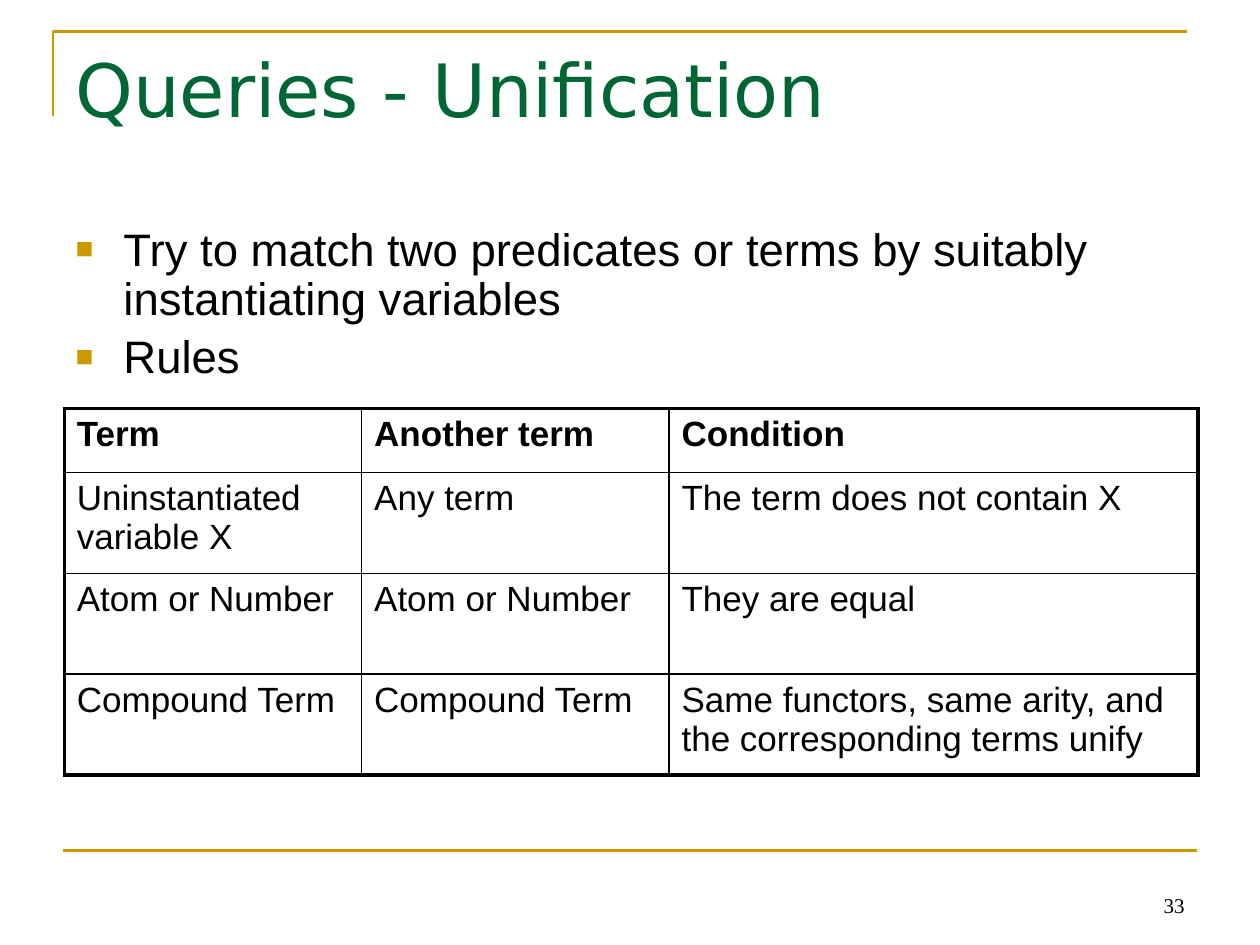
import dataclasses

import lxml.etree
import pptx
import pptx.dml.color
import pptx.enum.shapes
import pptx.enum.text
import pptx.oxml.ns
import pptx.util

Inches = pptx.util.Inches
Pt = pptx.util.Pt


@dataclasses.dataclass(frozen=True)
class Theme:
    accent: str = "CC9900"
    heading: str = "006633"
    ink: str = "000000"
    heading_font: str = "DejaVu Sans"
    body_font: str = "Arial"
    number_font: str = "Times New Roman"
    title_size: int = 42
    bullet_size: int = 26
    table_size: int = 20
    number_size: int = 12
    rule_width: float = 1.5
    frame_width: float = 2.25
    grid_width: float = 1


theme = Theme()


def style(paragraph, name, size, color, bold=False):
    paragraph.font.name = name
    paragraph.font.size = Pt(size)
    paragraph.font.bold = bold
    paragraph.font.color.rgb = pptx.dml.color.RGBColor.from_string(color)


def add_element(parent, tag, **attributes):
    return lxml.etree.SubElement(parent, pptx.oxml.ns.qn(tag), attributes)


deck = pptx.Presentation()
deck.slide_width = Inches(10)
deck.slide_height = Inches(7.5)
page = deck.slides.add_slide(deck.slide_layouts[1])
accent = pptx.dml.color.RGBColor.from_string(theme.accent)

builder = page.shapes.build_freeform(Inches(0.42), Inches(0.92), scale=1.0)
builder.add_line_segments(
    [(Inches(0.42), Inches(0.25)), (Inches(9.42), Inches(0.25))], close=False
)
corner_rule = builder.convert_to_shape()
corner_rule.shadow.inherit = False
corner_rule.fill.background()

footer_rule = page.shapes.add_connector(
    pptx.enum.shapes.MSO_CONNECTOR.STRAIGHT,
    Inches(0.5), Inches(6.75), Inches(9.5), Inches(6.75),
)
for rule in (corner_rule, footer_rule):
    rule.line.color.rgb = accent
    rule.line.width = Pt(theme.rule_width)
add_element(footer_rule._element.spPr, "a:effectLst")

number_box = page.shapes.add_textbox(Inches(7.17), Inches(6.83), Inches(2.33), Inches(0.5))
number_box.text_frame.word_wrap = True
number_box.text_frame.vertical_anchor = pptx.enum.text.MSO_ANCHOR.BOTTOM
para = number_box.text_frame.paragraphs[0]
para.text = "33"
para.alignment = pptx.enum.text.PP_ALIGN.RIGHT
style(para, theme.number_font, theme.number_size, theme.ink)

title = page.shapes.title
body = page.placeholders[1]
for box, top, height in ((title, 0.3, 1.25), (body, 1.75, 1.45)):
    box.left, box.top = Inches(0.5), Inches(top)
    box.width, box.height = Inches(9), Inches(height)
    box.text_frame.auto_size = pptx.enum.text.MSO_AUTO_SIZE.NONE
    box.text_frame.vertical_anchor = pptx.enum.text.MSO_ANCHOR.TOP

title.text_frame.text = "Queries - Unification"
para = title.text_frame.paragraphs[0]
para.alignment = pptx.enum.text.PP_ALIGN.LEFT
style(para, theme.heading_font, theme.title_size, theme.heading)

bullets = [
    "Try to match two predicates or terms by suitably instantiating variables",
    "Rules",
]
body.text_frame.text = "\n".join(bullets)
for para in body.text_frame.paragraphs:
    para.line_spacing = 0.9
    para.space_before = Pt(theme.bullet_size * 0.2)
    properties = para._p.get_or_add_pPr()
    properties.set("marL", str(Inches(0.38)))
    properties.set("indent", str(Inches(-0.38)))
    bullet_color = add_element(properties, "a:buClr")
    add_element(bullet_color, "a:srgbClr", val=theme.accent)
    add_element(properties, "a:buSzPct", val="65000")
    add_element(properties, "a:buFont", typeface=theme.body_font)
    add_element(properties, "a:buChar", char="■")
    style(para, theme.body_font, theme.bullet_size, theme.ink)

rows = [
    ["Term", "Another term", "Condition"],
    ["Uninstantiated variable X", "Any term", "The term does not contain X"],
    ["Atom or Number", "Atom or Number", "They are equal"],
    [
        "Compound Term",
        "Compound Term",
        "Same functors, same arity, and the corresponding terms unify",
    ],
]
column_widths = [2.36, 2.44, 4.2]
row_heights = [0.51, 0.8, 0.8, 0.8]
table = page.shapes.add_table(
    len(rows), len(column_widths), Inches(0.51), Inches(3.24),
    Inches(sum(column_widths)), Inches(sum(row_heights)),
).table
table.horz_banding = False
for column, width in zip(table.columns, column_widths):
    column.width = Inches(width)
for row, height in zip(table.rows, row_heights):
    row.height = Inches(height)

for row_index, row in enumerate(rows):
    for column_index, text in enumerate(row):
        cell = table.cell(row_index, column_index)
        cell.text = text
        para = cell.text_frame.paragraphs[0]
        para.space_before = Pt(theme.table_size * 0.2)
        style(para, theme.body_font, theme.table_size, theme.ink, bold=row_index == 0)
        outer_edges = {
            "a:lnL": column_index == 0,
            "a:lnR": column_index == len(row) - 1,
            "a:lnT": row_index == 0,
            "a:lnB": row_index == len(rows) - 1,
        }
        cell_properties = cell._tc.get_or_add_tcPr()
        for tag, is_outer in outer_edges.items():
            width = theme.frame_width if is_outer else theme.grid_width
            border = add_element(cell_properties, tag, w=str(Pt(width)))
            border_fill = add_element(border, "a:solidFill")
            add_element(border_fill, "a:srgbClr", val=theme.ink)
        cell.fill.background()

deck.save("out.pptx")
